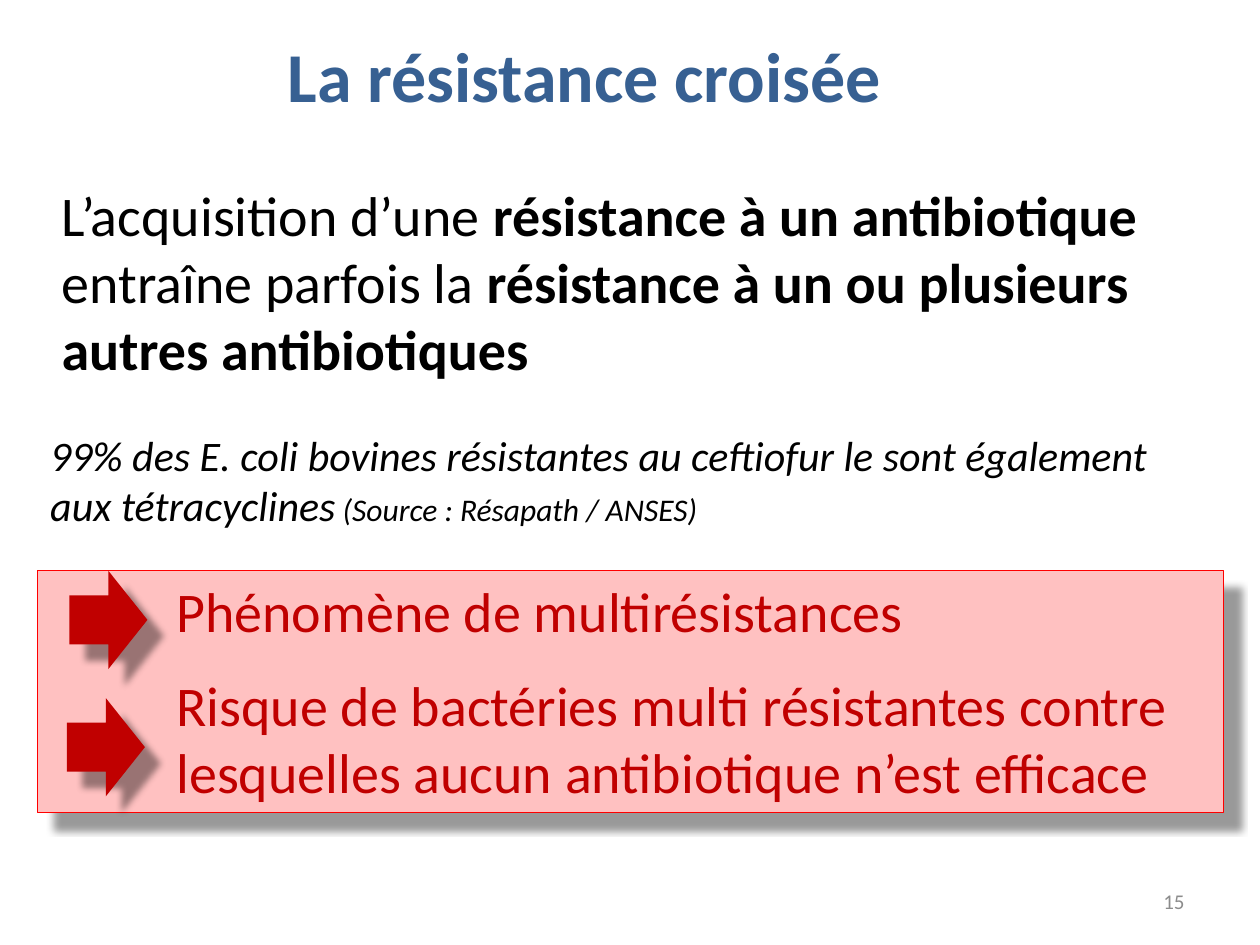
import collections
import dataclasses

import lxml.etree
import pptx
import pptx.dml.color
import pptx.enum.shapes
import pptx.enum.text
import pptx.oxml.ns
import pptx.util

Align = pptx.enum.text.PP_ALIGN
Anchor = pptx.enum.text.MSO_ANCHOR
Shape = pptx.enum.shapes.MSO_SHAPE
Box = collections.namedtuple("Box", "left top width height")


@dataclasses.dataclass(frozen=True)
class Theme:
    font: str = "Calibri"
    ink: str = "000000"
    title: str = "376092"
    accent: str = "C00000"
    panel: str = "FFC1C1"
    border: str = "FF0000"
    muted: str = "8C8C8C"
    title_size: int = 40
    body_size: int = 32
    example_size: int = 24
    source_size: int = 18
    number_size: int = 12


THEME = Theme()


def rgb(value):
    return pptx.dml.color.RGBColor.from_string(value)


def inches(box):
    return [pptx.util.Inches(length) for length in box]


def write(para, text, size=THEME.body_size, color=THEME.ink, bold=False, italic=False):
    span = para.add_run()
    span.text = text
    font = span.font
    font.name, font.size = THEME.font, pptx.util.Pt(size)
    font.bold, font.italic = bold, italic
    font.color.rgb = rgb(color)


def add_text_box(page, box, align=Align.LEFT, anchor=Anchor.TOP):
    """Add a wrapping text box and return its first paragraph."""
    frame = page.shapes.add_textbox(*inches(box)).text_frame
    frame.word_wrap = True
    frame.vertical_anchor = anchor
    para = frame.paragraphs[0]
    para.alignment = align
    return para


def add_shadowed_shape(page, kind, box, fill):
    shape = page.shapes.add_shape(kind, *inches(box))
    shape.fill.solid()
    shape.fill.fore_color.rgb = rgb(fill)
    shape.line.fill.background()
    shape.shadow.inherit = False
    qname = pptx.oxml.ns.qn
    effects = shape.element.spPr.find(qname("a:effectLst"))
    shadow = lxml.etree.SubElement(
        effects, qname("a:outerShdw"), blurRad=str(pptx.util.Pt(4)),
        dist=str(pptx.util.Pt(13)), dir=str(45 * 60000), algn="tl", rotWithShape="0")
    color = lxml.etree.SubElement(shadow, qname("a:srgbClr"), val=THEME.ink)
    lxml.etree.SubElement(color, qname("a:alpha"), val="40000")
    return shape


def add_title(page, box):
    para = add_text_box(page, box, Align.CENTER)
    write(para, "La résistance croisée ", THEME.title_size, THEME.title, bold=True)


def add_definition(page, box):
    para = add_text_box(page, box)
    write(para, "L’acquisition d’une ")
    write(para, "résistance à un antibiotique", bold=True)
    para.add_line_break()
    write(para, "entraîne parfois la ")
    write(para, "résistance à un ou plusieurs autres antibiotiques", bold=True)


def add_example(page, box):
    para = add_text_box(page, box)
    write(para, "99% des E. coli bovines résistantes au ceftiofur le sont "
                "également aux tétracyclines", THEME.example_size, italic=True)
    write(para, " (Source : Résapath / ANSES)", THEME.source_size, italic=True)


def add_consequences(page, box):
    """Add the panel of consequences, each marked by an arrow."""
    panel = add_shadowed_shape(page, Shape.RECTANGLE, box, THEME.panel)
    panel.line.color.rgb = rgb(THEME.border)
    panel.line.width = pptx.util.Pt(0.75)
    frame = panel.text_frame
    frame.word_wrap = True
    frame.vertical_anchor = Anchor.TOP
    frame.margin_left = pptx.util.Inches(1.1)
    consequences = [
        ("Phénomène de multirésistances", 0.25, 0),
        ("Risque de bactéries multi résistantes contre lesquelles "
         "aucun antibiotique n’est efficace", 0.23, 1.01),
    ]
    for index, (text, arrow_left, arrow_top) in enumerate(consequences):
        para = frame.add_paragraph() if index else frame.paragraphs[0]
        para.alignment = Align.LEFT
        para.space_before = pptx.util.Pt(15 if index else 0)
        write(para, text, color=THEME.accent)
        arrow = Box(box.left + arrow_left, box.top + arrow_top, 0.62, 0.78)
        add_shadowed_shape(page, Shape.RIGHT_ARROW, arrow, THEME.accent)


def add_page_number(page, box):
    para = add_text_box(page, box, Align.RIGHT, Anchor.MIDDLE)
    write(para, "15", THEME.number_size, THEME.muted)


def main():
    deck = pptx.Presentation()
    deck.slide_width, deck.slide_height = pptx.util.Inches(10), pptx.util.Inches(7.5)
    page = deck.slides.add_slide(deck.slide_layouts[6])
    add_definition(page, Box(0.39, 1.38, 9.22, 1.72))
    add_example(page, Box(0.3, 3.36, 9.09, 0.91))
    add_title(page, Box(1.69, 0.21, 6.02, 0.77))
    add_consequences(page, Box(0.3, 4.53, 9.41, 1.92))
    add_page_number(page, Box(7.17, 6.95, 2.33, 0.4))
    deck.save("out.pptx")


if __name__ == "__main__":
    main()
